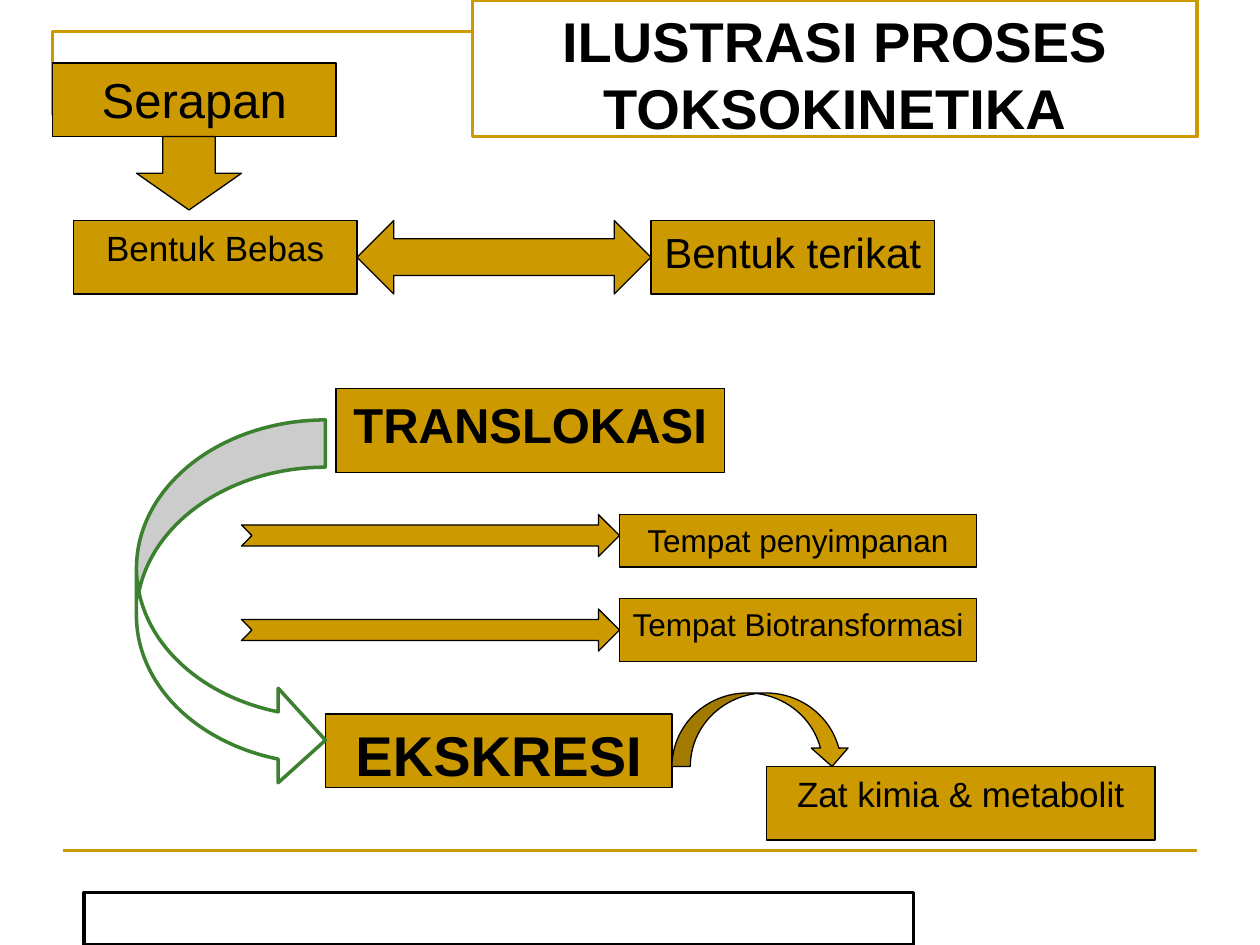
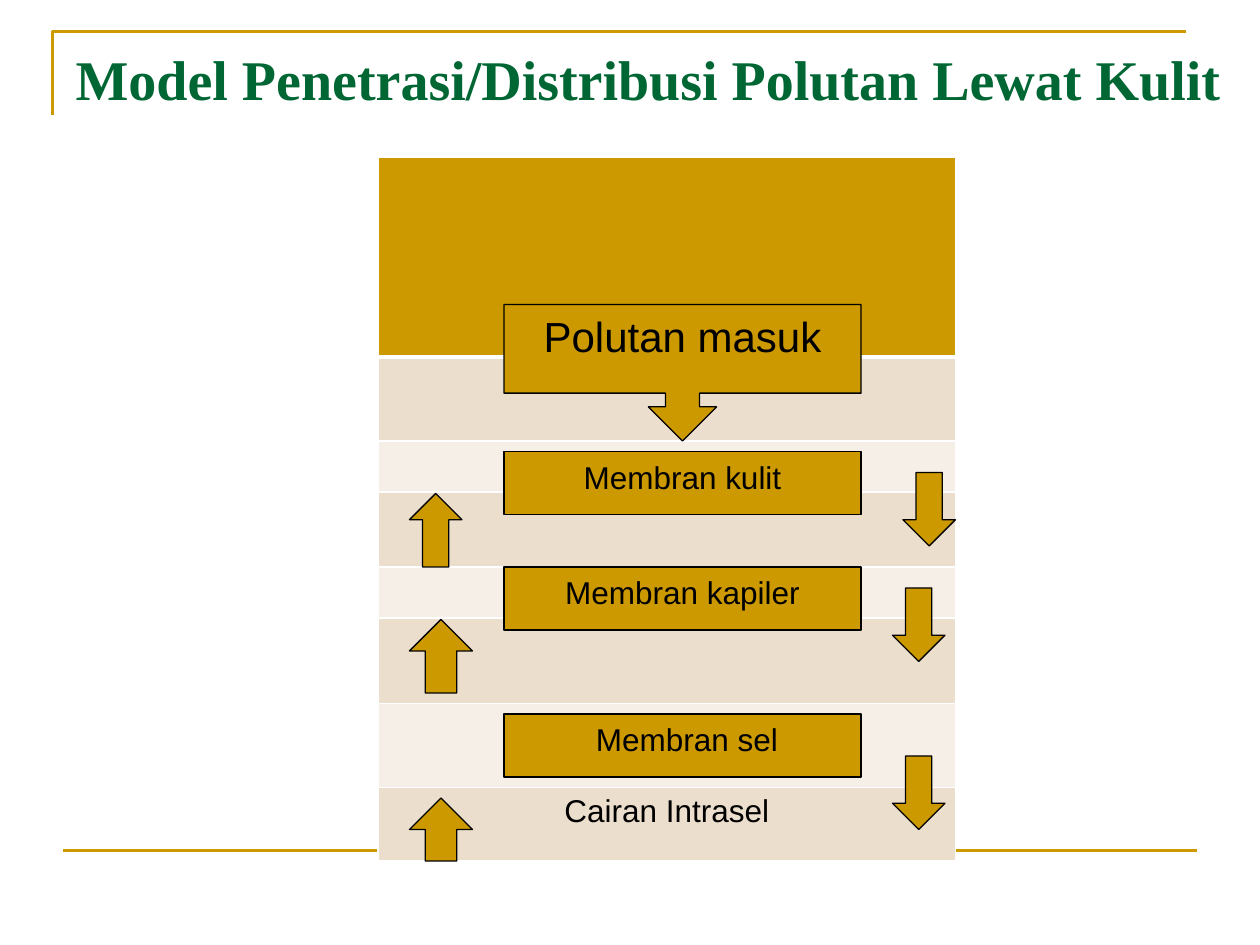
from dataclasses import dataclass
from typing import Any, NamedTuple

from lxml import etree
from pptx import Presentation, util as u
from pptx.dml.color import RGBColor
from pptx.enum import shapes, text
from pptx.oxml import ns

Kind = shapes.MSO_SHAPE


@dataclass(frozen=True)
class Theme:
    gold: str = "CC9900"
    dark_green: str = "006633"
    leaf_green: str = "3B812F"
    black: str = "000000"
    white: str = "FFFFFF"
    band_dark: str = "ECDECC"
    band_light: str = "F6EFE7"
    sans: str = "Arial"
    serif: str = "Times New Roman"
    heading: float = 32
    large: float = 28
    medium: float = 24
    normal: float = 20
    small: float = 18
    thin: float = 0.75
    frame: float = 1.5
    thick: float = 2


THEME = Theme()


class Part(NamedTuple):
    """A preset shape: place in points, then wording and look."""
    left: float
    top: float
    width: float
    height: float
    kind: Kind = Kind.RECTANGLE
    words: str = ""
    size: float = THEME.small
    bold: bool = False
    fill: str = THEME.gold
    edge: str = THEME.black
    edge_width: float = THEME.thin


TOXICOKINETICS = [
    Part(48, 510, 474, 30, fill=THEME.white, edge_width=THEME.thick),
    # Uptake and the free and bound forms
    Part(30, 36, 162, 42, words="Serapan", size=THEME.large),
    Part(78, 78, 60, 42, Kind.DOWN_ARROW),
    Part(372, 126, 162, 42, words="Bentuk terikat", size=THEME.medium),
    Part(42, 126, 162, 42, words="Bentuk Bebas", size=THEME.normal),
    Part(204, 126, 168, 42, Kind.LEFT_RIGHT_ARROW),
    # Translocation, its destinations and excretion
    Part(192, 222, 222, 48, words="TRANSLOKASI", size=THEME.large, bold=True),
    Part(354, 294, 204, 30, words="Tempat penyimpanan"),
    Part(354, 342, 204, 36, words="Tempat Biotransformasi"),
    Part(186, 408, 198, 42, words="EKSKRESI", size=THEME.heading, bold=True),
    Part(438, 438, 222, 42, words="Zat kimia & metabolit", size=THEME.normal),
    Part(78, 240, 108, 210, Kind.CURVED_RIGHT_ARROW, fill=THEME.white,
         edge=THEME.leaf_green, edge_width=THEME.thick),
    Part(138, 294, 216, 24, Kind.NOTCHED_RIGHT_ARROW),
    Part(138, 348, 216, 24, Kind.NOTCHED_RIGHT_ARROW),
    Part(384, 396, 102, 42, Kind.CURVED_DOWN_ARROW),
]

PENETRATION = [
    Part(288, 174, 204, 78, Kind.DOWN_ARROW_CALLOUT, "Polutan masuk", THEME.medium),
    # Membranes
    *(Part(288, top, 204, 36, words=membrane) for top, membrane in
      [(258, "Membran kulit"), (324, "Membran kapiler"), (408, " Membran sel")]),
    # Flow out on the left, flow in on the right
    *(Part(234, top, width, height, Kind.UP_ARROW) for top, width, height in
      [(456, 36, 36), (282, 30, 42), (354, 36, 42)]),
    *(Part(left, top, 30, 42, Kind.DOWN_ARROW) for left, top in
      [(516, 270), (510, 432), (510, 336)]),
]

LAYER_HEIGHTS = [114, 48, 29.3, 42.7, 29.3, 48.7, 48, 42]


def apply(target: Any, values: dict[str, Any]) -> None:
    for name, value in values.items():
        setattr(target, name, value)


def rgb(colour: str) -> RGBColor:
    return RGBColor.from_string(colour)


def outline(shape: Any, colour: str, width: float) -> None:
    shape.line.color.rgb = rgb(colour)
    shape.line.width = u.Pt(width)


def paint(shape: Any, fill: str, edge: str, width: float) -> None:
    shape.fill.solid()
    shape.fill.fore_color.rgb = rgb(fill)
    outline(shape, edge, width)


def write(frame: Any, words: str, size: float, bold: bool = False,
          font: str = THEME.sans, colour: str = THEME.black,
          align: Any = text.PP_ALIGN.CENTER) -> None:
    frame.text = words
    paragraph = frame.paragraphs[0]
    paragraph.alignment = align
    run_font = paragraph.runs[0].font
    apply(run_font, {"name": font, "size": u.Pt(size), "bold": bold})
    run_font.color.rgb = rgb(colour)


def draw_parts(slide: Any, parts: list[Part]) -> None:
    for part in parts:
        shape = slide.shapes.add_shape(part.kind, *map(u.Pt, part[:4]))
        shape.shadow.inherit = False
        paint(shape, part.fill, part.edge, part.edge_width)
        if part.words:
            apply(shape.text_frame, {
                "word_wrap": True, "vertical_anchor": text.MSO_ANCHOR.TOP,
                "margin_left": 0, "margin_right": 0})
            write(shape.text_frame, part.words, part.size, part.bold)


def place_title(slide: Any, box: tuple[float, ...], words: str, **look: Any) -> Any:
    title = slide.shapes.title
    apply(title, dict(zip(("left", "top", "width", "height"), map(u.Pt, box))))
    apply(title.text_frame, {
        "word_wrap": True, "auto_size": text.MSO_AUTO_SIZE.NONE,
        "vertical_anchor": text.MSO_ANCHOR.TOP})
    write(title.text_frame, words, THEME.heading, bold=True, **look)
    return title


def frame_layout(slide: Any) -> None:
    """Draw the corner and the foot rule, and hand them to the layout."""
    builder = slide.shapes.build_freeform(u.Pt(30), u.Pt(66))
    builder.add_line_segments(
        [(u.Pt(30), u.Pt(18)), (u.Pt(678), u.Pt(18))], close=False)
    corner = builder.convert_to_shape()
    corner.fill.background()
    corner.shadow.inherit = False
    foot_rule = slide.shapes.add_connector(
        shapes.MSO_CONNECTOR.STRAIGHT, *map(u.Pt, (36, 486, 684, 486)))
    etree.SubElement(foot_rule._element.spPr, ns.qn("a:effectLst"))
    for rule in (corner, foot_rule):
        outline(rule, THEME.gold, THEME.frame)
        slide.slide_layout.shapes._spTree.append(rule._element)


def border_cell(cell: Any, widths: dict[str, float]) -> None:
    properties = cell._tc.get_or_add_tcPr()
    for side, width in widths.items():
        line = etree.SubElement(properties, ns.qn(f"a:{side}"), w=str(u.Pt(width)))
        solid = etree.SubElement(line, ns.qn("a:solidFill"))
        etree.SubElement(solid, ns.qn("a:srgbClr"), val=THEME.white)


def draw_skin_layers(slide: Any) -> None:
    layers = slide.shapes.add_table(
        len(LAYER_HEIGHTS), 1, u.Pt(216), u.Pt(90), u.Pt(330),
        u.Pt(sum(LAYER_HEIGHTS))).table
    for index, height in enumerate(LAYER_HEIGHTS):
        layers.rows[index].height = u.Pt(height)
        cell = layers.cell(index, 0)
        border_cell(cell, {"lnL": 1, "lnR": 1, "lnT": 3 if index == 1 else 1,
                           "lnB": 3 if index == 0 else 1})
        band = THEME.band_dark if index % 2 else THEME.band_light
        cell.fill.solid()
        cell.fill.fore_color.rgb = rgb(band if index else THEME.gold)
    write(cell.text_frame, "Cairan Intrasel", THEME.small)


def main() -> None:
    deck = Presentation()
    apply(deck, {"slide_width": u.Pt(720), "slide_height": u.Pt(540)})
    title_only = deck.slide_layouts[5]

    # Toxicokinetic process
    process = deck.slides.add_slide(title_only)
    frame_layout(process)
    heading = place_title(process, (270, 0, 414, 78), "ILUSTRASI PROSES TOKSOKINETIKA")
    paint(heading, THEME.white, THEME.gold, THEME.thick)
    draw_parts(process, TOXICOKINETICS)

    # Penetration through the skin
    skin = deck.slides.add_slide(title_only)
    place_title(skin, (36, 21.6, 684, 90),
                "Model Penetrasi/Distribusi Polutan Lewat Kulit",
                font=THEME.serif, colour=THEME.dark_green, align=text.PP_ALIGN.LEFT)
    draw_skin_layers(skin)
    draw_parts(skin, PENETRATION)

    deck.save("out.pptx")


if __name__ == "__main__":
    main()
